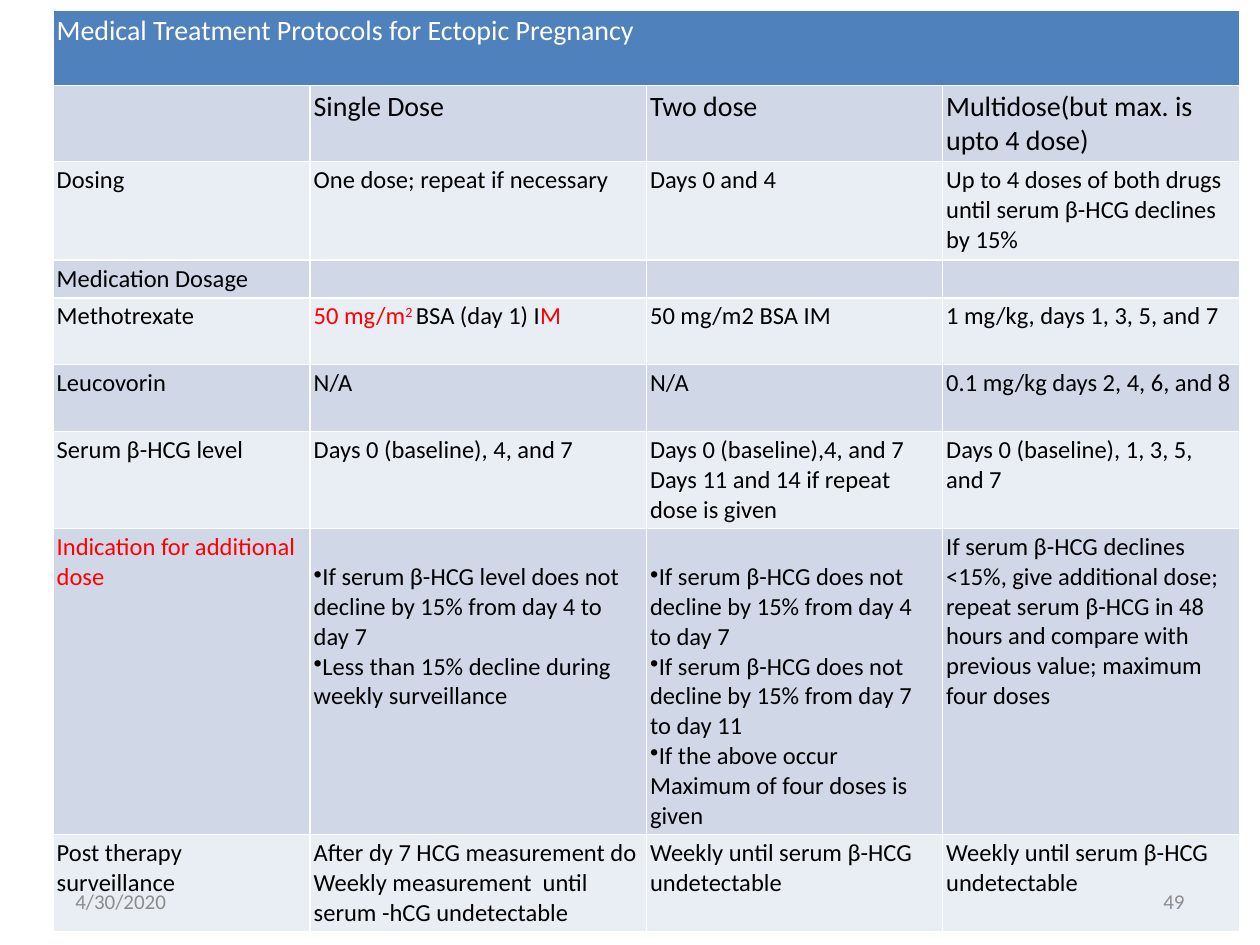
from lxml import etree
from pptx import Presentation
from pptx.dml.color import RGBColor
from pptx.enum import text
from pptx.oxml.ns import qn
from pptx.util import Inches, Pt

COLORS = {
    "header": "4F81BD",
    "band_dark": "D0D8E8",
    "band_light": "E9EDF4",
    "white": "FFFFFF",
    "black": "000000",
    "red": "FF0000",
    "footer": "8C8C8C",
}
FONT = "Calibri"
COL_WIDTHS = [2.04, 2.67, 2.35, 2.36]
ROW_HEIGHTS = [0.6, 0.6, 0.78, 0.3, 0.53, 0.53, 0.77, 2.43, 0.77]
CELL_MARGIN = 0.03
BULLET_TOP = 0.27

# A cell is a string, a tuple of (text, colour, is superscript) runs,
# or a list of bullet points.
ROWS = [
    ["Medical Treatment Protocols for Ectopic Pregnancy", "", "", ""],
    ["", "Single Dose", "Two dose", "Multidose(but max. is upto 4 dose)"],
    ["Dosing", "One dose; repeat if necessary", "Days 0 and 4",
     "Up to 4 doses of both drugs until serum β-HCG declines by 15%"],
    ["Medication Dosage", "", "", ""],
    ["Methotrexate",
     (("50 mg/m", "red", False), ("2 ", "red", True),
      ("BSA (day 1) I", "black", False), ("M", "red", False)),
     "50 mg/m2 BSA IM", "1 mg/kg, days 1, 3, 5, and 7"],
    ["Leucovorin", "N/A", "N/A", "0.1 mg/kg days 2, 4, 6, and 8"],
    ["Serum β-HCG level", "Days 0 (baseline), 4, and 7",
     "Days 0 (baseline),4, and 7 Days 11 and 14 if repeat dose is given",
     "Days 0 (baseline), 1, 3, 5, and 7"],
    [(("Indication for additional dose", "red", False),),
     ["If serum β-HCG level does not decline by 15% from day 4 to day 7",
      "Less than 15% decline during weekly surveillance"],
     ["If serum β-HCG does not decline by 15% from day 4 to day 7",
      "If serum β-HCG does not decline by 15% from day 7 to day 11",
      "If the above occur Maximum of four doses is given"],
     "If serum β-HCG declines <15%, give additional dose; repeat serum β-HCG "
     "in 48 hours and compare with previous value; maximum four doses"],
    ["Post therapy surveillance",
     "After dy 7 HCG measurement do Weekly measurement  until serum -hCG undetectable",
     "Weekly until serum β-HCG undetectable",
     "Weekly until serum β-HCG undetectable"],
]


def rgb(name):
    return RGBColor.from_string(COLORS[name])


class SlideBuilder:
    def __init__(self, prs):
        self.slide = prs.slides.add_slide(prs.slide_layouts[6])

    def style_run(self, r, size, color):
        r.font.name = FONT
        r.font.size = Pt(size)
        r.font.bold = False
        r.font.color.rgb = rgb(color)

    def add_bullet(self, p):
        pPr = p._p.get_or_add_pPr()
        pPr.set("marL", "0")
        pPr.set("indent", "0")
        etree.SubElement(pPr, qn("a:buChar"), char="•")

    def fill_cell(self, cell, content, size, color, fill):
        cell.fill.solid()
        cell.fill.fore_color.rgb = rgb(fill)
        cell.margin_left = cell.margin_right = Inches(CELL_MARGIN)
        cell.margin_top = cell.margin_bottom = Inches(CELL_MARGIN)
        tf = cell.text_frame
        if not content:
            # keeps an empty cell from stretching its row
            etree.SubElement(tf.paragraphs[0]._p, qn("a:endParaRPr"), sz=str(size * 100))
        elif isinstance(content, tuple):
            for words, run_color, raised in content:
                r = tf.paragraphs[0].add_run()
                r.text = words
                self.style_run(r, size, run_color)
                if raised:
                    r.font._element.set("baseline", "30000")
        else:
            bulleted = isinstance(content, list)
            tf.text = "\n".join(content) if bulleted else content
            if bulleted:
                cell.margin_top = Inches(BULLET_TOP)
            for p in tf.paragraphs:
                if bulleted:
                    self.add_bullet(p)
                for r in p.runs:
                    self.style_run(r, size, color)

    def add_table(self, left, top, rows):
        table = self.slide.shapes.add_table(
            len(rows), len(COL_WIDTHS), Inches(left), Inches(top),
            Inches(sum(COL_WIDTHS)), Inches(sum(ROW_HEIGHTS))).table
        for column, width in zip(table.columns, COL_WIDTHS):
            column.width = Inches(width)
        for i, (row, height) in enumerate(zip(rows, ROW_HEIGHTS)):
            table.rows[i].height = Inches(height)
            size = 16 if i < 2 else 14
            color = "black" if i else "white"
            fill = ("band_dark" if i % 2 else "band_light") if i else "header"
            for j, content in enumerate(row):
                self.fill_cell(table.cell(i, j), content, size, color, fill)
        table.cell(0, 0).merge(table.cell(0, len(COL_WIDTHS) - 1))

    def add_footer(self, left, words, align):
        sp = self.slide.shapes.add_textbox(
            Inches(left), Inches(6.95), Inches(2.33), Inches(0.4))
        tf = sp.text_frame
        tf.word_wrap = True
        tf.vertical_anchor = text.MSO_ANCHOR.MIDDLE
        tf.text = words
        p = tf.paragraphs[0]
        p.alignment = align
        self.style_run(p.runs[0], 12, "footer")


def main():
    prs = Presentation()
    prs.slide_width = Inches(10)
    prs.slide_height = Inches(7.5)
    builder = SlideBuilder(prs)
    builder.add_table(0.42, 0.08, ROWS)
    builder.add_footer(0.5, "4/30/2020", text.PP_ALIGN.LEFT)
    builder.add_footer(7.17, "49", text.PP_ALIGN.RIGHT)
    prs.save("out.pptx")


if __name__ == "__main__":
    main()
